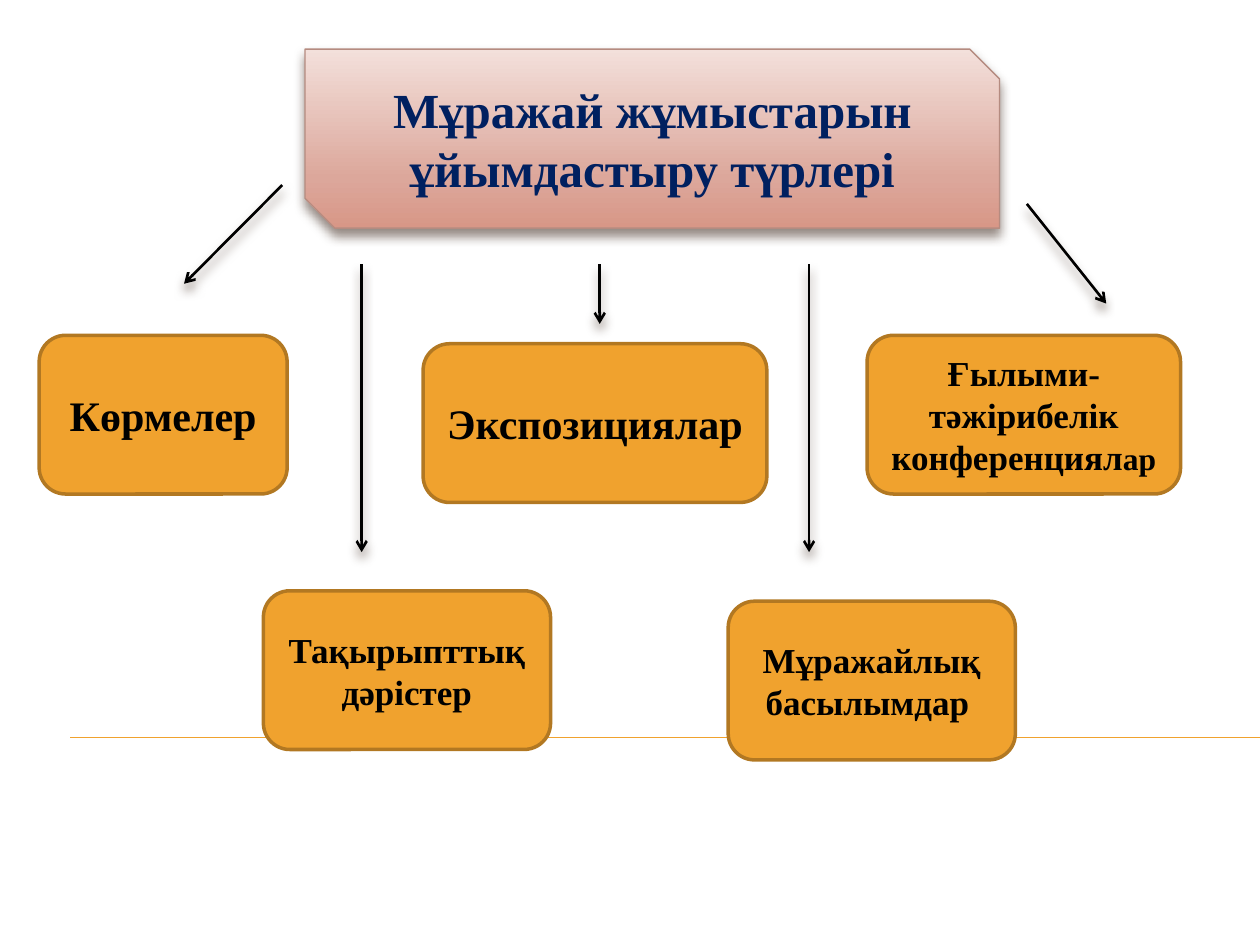
"""Build a slide showing the ways of organising museum work."""
from copy import deepcopy

from lxml.etree import SubElement
from pptx import Presentation
from pptx.dml.color import RGBColor
from pptx.enum.shapes import MSO_CONNECTOR, MSO_SHAPE
from pptx.enum.text import MSO_ANCHOR, MSO_AUTO_SIZE, PP_ALIGN
from pptx.oxml.ns import qn
from pptx.util import Cm, Pt

FONT = "Times New Roman"
BLACK = RGBColor(0x00, 0x00, 0x00)
NAVY = RGBColor(0x00, 0x20, 0x60)
ORANGE = RGBColor(0xF0, 0xA2, 0x2E)
BROWN = RGBColor(0xB2, 0x78, 0x22)
ROSE = RGBColor(0xB5, 0x8B, 0x80)
SHADOW = RGBColor(0x4E, 0x3B, 0x30)
GRADIENT = [
    (0, RGBColor(0xF3, 0xE0, 0xDB)),
    (0.72, RGBColor(0xDC, 0xA7, 0x9B)),
    (1, RGBColor(0xD8, 0x97, 0x87)),
]

HEADING = "Мұражай жұмыстарын ұйымдастыру түрлері"
HEADING_PLACE = (6.15, 0.99, 14, 3.61)
BOX_HEIGHT = 3.2
BOXES = [
    (0.79, 6.76, 5, [("Көрмелер", 24)]),
    (8.53, 6.93, 6.93, [("Экспозициялар ", 24)]),
    (5.31, 11.91, 5.79, [("Тақырыпттық дәрістер", 20)]),
    (17.48, 6.76, 6.32, [("Ғылыми-тәжірибелік конференциял", 20), ("ар", 18)]),
    (14.68, 12.12, 5.79, [("Мұражайлық басылымдар ", 20)]),
]
ARROWS = [
    (5.69, 3.73, 3.71, 5.72),
    (7.29, 5.33, 7.29, 11.13),
    (16.31, 5.33, 16.31, 11.13),
    (12.09, 5.33, 12.09, 6.53),
    (20.7, 4.11, 22.3, 6.12),
]
RULE = (1.42, 14.86, 25.4, 14.86)


def add_shadow(effects):
    shadow = SubElement(effects, qn("a:outerShdw"), blurRad=str(Pt(6)),
                        dist=str(Pt(4)), dir="5400000", rotWithShape="0")
    color = SubElement(shadow, qn("a:srgbClr"), val=str(SHADOW))
    SubElement(color, qn("a:alpha"), val="60000")


def add_line(page, ends, color, width):
    line = page.shapes.add_connector(MSO_CONNECTOR.STRAIGHT, *map(Cm, ends))
    line.line.color.rgb = color
    line.line.width = Pt(width)
    properties = line._element.spPr
    return properties.find(qn("a:ln")), SubElement(properties, qn("a:effectLst"))


def add_arrow(page, ends):
    stroke, effects = add_line(page, ends, BLACK, 1.5)
    SubElement(stroke, qn("a:tailEnd"), type="arrow")
    add_shadow(effects)


def add_panel(page, kind, place, line_color, line_width):
    panel = page.shapes.add_shape(kind, *map(Cm, place))
    panel.line.color.rgb = line_color
    panel.line.width = Pt(line_width)
    panel.shadow.inherit = False
    return panel


def write(shape, spans, color):
    frame = shape.text_frame
    frame.word_wrap = True
    frame.auto_size = MSO_AUTO_SIZE.NONE
    frame.vertical_anchor = MSO_ANCHOR.MIDDLE
    para = frame.paragraphs[0]
    para.alignment = PP_ALIGN.CENTER
    for text, size in spans:
        span = para.add_run()
        span.text = text
        span.font.name = FONT
        span.font.size = Pt(size)
        span.font.bold = True
        span.font.color.rgb = color


def add_heading(page):
    panel = add_panel(page, MSO_SHAPE.SNIP_2_DIAG_RECTANGLE, HEADING_PLACE, ROSE, 0.79)
    panel.fill.gradient()
    panel.fill.gradient_angle = 270
    properties = panel._element.spPr
    stops = properties.find(qn("a:gradFill")).find(qn("a:gsLst"))
    stops.append(deepcopy(stops[0]))
    for stop, (position, color) in zip(panel.fill.gradient_stops, GRADIENT):
        stop.position = position
        stop.color.rgb = color
    add_shadow(properties.find(qn("a:effectLst")))

    title = page.shapes.title
    title.left, title.top, title.width, title.height = map(Cm, HEADING_PLACE)
    write(title, [(HEADING, 28)], NAVY)
    panel._element.addnext(title._element)


def add_box(page, left, top, width, spans):
    place = (left, top, width, BOX_HEIGHT)
    box = add_panel(page, MSO_SHAPE.FLOWCHART_ALTERNATE_PROCESS, place, BROWN, 2)
    box.fill.solid()
    box.fill.fore_color.rgb = ORANGE
    write(box, spans, BLACK)


def main():
    deck = Presentation()
    deck.slide_width, deck.slide_height = Cm(25.4), Cm(19.05)
    page = deck.slides.add_slide(deck.slide_layouts[5])
    add_line(page, RULE, ORANGE, 0.75)
    add_heading(page)
    for box in BOXES:
        add_box(page, *box)
    for ends in ARROWS:
        add_arrow(page, ends)
    deck.save("out.pptx")


if __name__ == "__main__":
    main()
